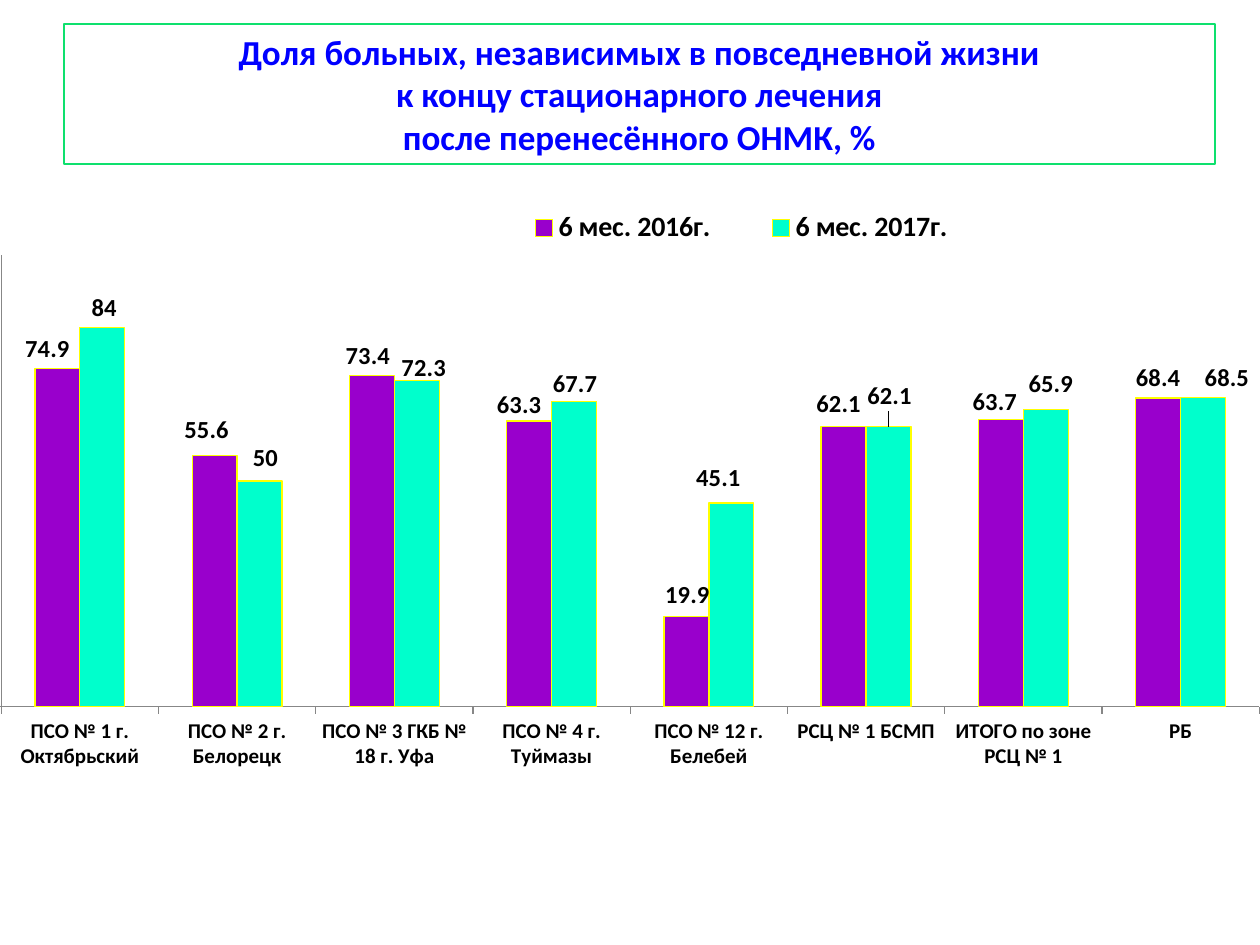
from pptx import Presentation
from pptx.chart.data import CategoryChartData
from pptx.dml.color import RGBColor
from pptx.enum.chart import XL_CHART_TYPE, XL_LABEL_POSITION, XL_LEGEND_POSITION
from pptx.enum.chart import XL_TICK_LABEL_POSITION, XL_TICK_MARK
from pptx.enum.shapes import MSO_SHAPE
from pptx.enum.text import MSO_ANCHOR, PP_ALIGN
from pptx.oxml import parse_xml
from pptx.oxml.ns import nsdecls, qn
from pptx.util import Pt

PX = 914400 // 126
WIDTH, HEIGHT = 1260, 945

TITLE = ["Доля больных, независимых в повседневной жизни",
         "к концу стационарного лечения",
         "после перенесённого ОНМК, %"]
CATEGORIES = ["ПСО № 1 г. Октябрьский", "ПСО № 2 г. Белорецк",
              "ПСО № 3 ГКБ № 18 г. Уфа", "ПСО № 4 г. Туймазы",
              "ПСО № 12 г. Белебей", "РСЦ № 1 БСМП",
              "ИТОГО по зоне РСЦ № 1", "РБ"]
# Label shifts are in px from the usual place above each column.
SERIES = [
    {"name": "6 мес. 2016г.", "color": "9900CC",
     "values": [74.9, 55.6, 73.4, 63.3, 19.9, 62.1, 63.7, 68.4],
     "shifts": [(-10, 0), (-8, -6), (-4, 1), (-10, 4), (1, -2), (-5, -2), (-6, 3)]},
    {"name": "6 мес. 2017г.", "color": "00FFCC",
     "values": [84, 50, 72.3, 67.7, 45.1, 62.1, 65.9, 68.5],
     "shifts": [(2, 0), (6, -3), (7, 8), (1, 3), (-13, -5), (1, -10), (5, -5), (24, 0)]},
]


def px(length):
    return length * PX


def rgb(value):
    return RGBColor.from_string(value)


def apply(target, values):
    for name, value in values.items():
        setattr(target, name, value)


def set_layout(element, index, **values):
    """Give a chart part a manual layout, placed as its child number index."""
    for old in element.findall(qn("c:layout")):
        element.remove(old)
    parts = "".join(f'<c:{name} val="{value}"/>' for name, value in values.items())
    element.insert(index, parse_xml(
        f'<c:layout {nsdecls("c")}><c:manualLayout>{parts}</c:manualLayout></c:layout>'))


class SlideBuilder:
    font_name = "Calibri"
    axis_color = "878787"

    def __init__(self, slide):
        self.slide = slide

    def style_font(self, font, size, color="000000"):
        apply(font, {"name": self.font_name, "size": Pt(size), "bold": True})
        font.color.rgb = rgb(color)

    def style_line(self, line, color):
        line.color.rgb = rgb(color)
        line.width = Pt(0.75)

    def title_box(self, box, lines):
        shape = self.slide.shapes.add_shape(MSO_SHAPE.RECTANGLE, *map(px, box))
        shape.shadow.inherit = False
        shape.fill.solid()
        shape.fill.fore_color.rgb = rgb("FFFFFF")
        self.style_line(shape.line, "0EE06D")
        frame = shape.text_frame
        apply(frame, {"word_wrap": True, "vertical_anchor": MSO_ANCHOR.MIDDLE})
        frame.text = "\n".join(lines)
        for paragraph in frame.paragraphs:
            paragraph.alignment = PP_ALIGN.CENTER
            self.style_font(paragraph.runs[0].font, 20, "0000FF")

    def column_chart(self, box, categories, series_list):
        data = CategoryChartData()
        data.categories = categories
        for item in series_list:
            data.add_series(item["name"], item["values"])
        chart = self.slide.shapes.add_chart(
            XL_CHART_TYPE.COLUMN_CLUSTERED, *map(px, box), data).chart
        apply(chart, {"has_title": False, "has_legend": True})
        apply(chart.font, {"name": self.font_name, "size": Pt(18)})
        plot = chart.plots[0]
        apply(plot, {"gap_width": 150, "overlap": 0, "vary_by_categories": False})
        set_layout(chart._chartSpace.chart.plotArea, 0, layoutTarget="inner",
                   xMode="edge", yMode="edge", x=0.028, y=0.145, w=0.972, h=0.651)
        self.legend(chart.legend)
        self.axes(chart)
        for series, item in zip(plot.series, series_list):
            self.columns(series, item, box)

    def legend(self, legend):
        apply(legend, {"position": XL_LEGEND_POSITION.TOP, "include_in_layout": False})
        self.style_font(legend.font, 16)
        set_layout(legend._element, 1, xMode="edge", yMode="edge",
                   x=0.4, y=0.07, w=0.4, h=0.07)

    def axes(self, chart):
        for axis, size in ((chart.category_axis, 12), (chart.value_axis, 8)):
            apply(axis, {"major_tick_mark": XL_TICK_MARK.OUTSIDE,
                         "minor_tick_mark": XL_TICK_MARK.NONE})
            self.style_font(axis.tick_labels.font, size)
            self.style_line(axis.format.line, self.axis_color)
        apply(chart.value_axis, {
            "minimum_scale": 0, "maximum_scale": 100, "major_unit": 120,
            "has_major_gridlines": True,
            "tick_label_position": XL_TICK_LABEL_POSITION.NONE})
        self.style_line(chart.value_axis.major_gridlines.format.line, self.axis_color)

    def columns(self, series, item, box):
        series.format.fill.solid()
        series.format.fill.fore_color.rgb = rgb(item["color"])
        self.style_line(series.format.line, "FFFF00")
        labels = series.data_labels
        apply(labels, {"show_value": True, "position": XL_LABEL_POSITION.OUTSIDE_END})
        self.style_font(labels.font, 14)
        for index in range(len(item["shifts"])):
            label = series.points[index].data_label
            self.style_font(label.font, 14)
            label.position = XL_LABEL_POSITION.OUTSIDE_END
        elements = series._element.xpath("c:dLbls/c:dLbl")
        for element, (right, down) in zip(elements, item["shifts"]):
            set_layout(element, 1, x=round(right / box[2], 4), y=round(down / box[3], 4))


def main():
    presentation = Presentation()
    apply(presentation, {"slide_width": px(WIDTH), "slide_height": px(HEIGHT)})
    builder = SlideBuilder(presentation.slides.add_slide(presentation.slide_layouts[6]))
    builder.column_chart((-35, 155, 1295, 693), CATEGORIES, SERIES)
    builder.title_box((64, 24, 1151, 140), TITLE)
    presentation.save("out.pptx")


if __name__ == "__main__":
    main()
